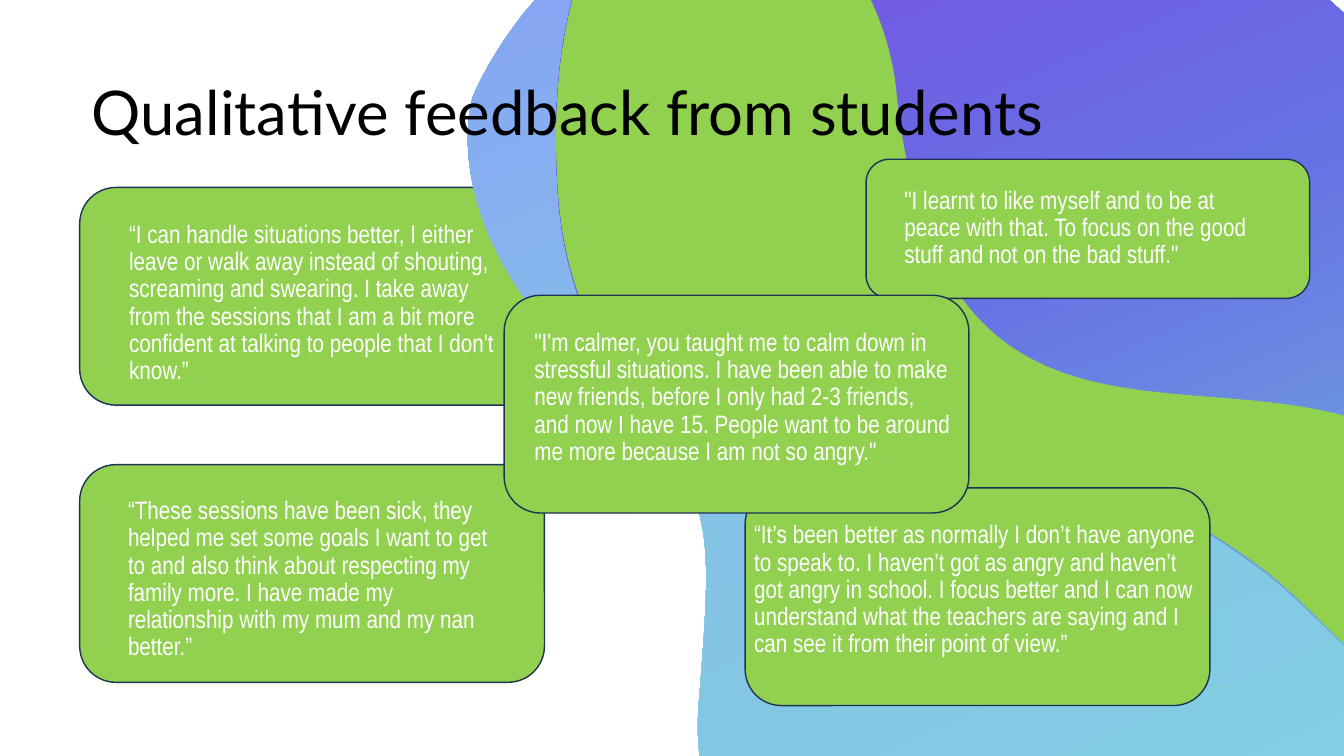
import copy
import math

import lxml.etree
import pptx
import pptx.dml.color
import pptx.enum.shapes
import pptx.enum.text
import pptx.oxml
import pptx.oxml.ns
import pptx.util

Inches = pptx.util.Inches
qn = pptx.oxml.ns.qn

# Content
TITLE = "Qualitative feedback from students"

# Each quote: card (left, top, width, height), text (left, top, width), wording
QUOTES = [
    ((0.79, 1.86, 4.61, 2.16), (1.28, 2.2, 3.64),
     "“I can handle situations better, I either leave or walk away instead of shouting, "
     "screaming and swearing. I take away from the sessions that I am a bit more confident "
     "at talking to people that I don't know.”"),
    ((0.79, 4.61, 4.61, 2.16), (1.27, 4.94, 3.64),
     "“These sessions have been sick, they helped me set some goals I want to get to and "
     "also think about respecting my family more. I have made my relationship with my mum "
     "and my nan better.”"),
    ((7.39, 4.84, 4.61, 2.16), (7.48, 5.18, 4.44),
     "“It’s been better as normally I don’t have anyone to speak to. I haven’t got as angry "
     "and haven’t got angry in school. I focus better and I can now understand what the "
     "teachers are saying and I can see it from their point of view.”"),
    ((8.59, 1.58, 4.4, 1.38), (8.97, 1.86, 3.64),
     '"I learnt to like myself and to be at peace with that. To focus on the good stuff '
     'and not on the bad stuff."'),
    ((5, 2.93, 4.61, 2.16), (5.3, 3.27, 4.17),
     '"I\'m calmer, you taught me to calm down in stressful situations. I have been able to '
     'make new friends, before I only had 2-3 friends, and now I have 15. People want to be '
     'around me more because I am not so angry."'),
]
QUOTE_HEIGHT = 1.47

THEME = {
    "green": "92D050", "outline": "1E3256", "title": "000000", "quote": "FFFFFF",
    "title_font": "Lato", "quote_font": "Arial Narrow", "title_size": 44, "quote_size": 18,
    "sky": [(0, "80DEDE"), (0.54, "85C1E7"), (1, "878CFF")],
    "violet": [(0, "7CEFD8"), (0.51, "6672E4"), (1, "882BE5")],
}

# Each wave: colours, frame before turning, start point, curves (control, control, end)
WAVE_TURN = 157
WAVES = [
    (THEME["sky"], (5, -2.31, 9.8, 12.6), (9.06, 1.2), [
        (9.53, 5.72, 12.84, 3.26, 14.64, 5.06), (16.44, 6.85, 15.77, 8.21, 15.22, 8.51),
        (14.67, 8.81, 14.2, 8.79, 13.65, 7.99), (13.1, 7.2, 11.37, 8.11, 10.18, 8.73),
        (9, 9.34, 6.76, 9.14, 6.93, 6.98), (7.1, 4.83, 7.08, 4.94, 5.69, 3.53),
        (4.3, 2.13, 4.69, 0.96, 4.69, 0.96), (4.69, 0.96, 5.47, -0.97, 7.2, -0.82),
        (8.94, -0.67, 9.06, 1.2, 9.06, 1.2)]),
    (THEME["violet"], (5.22, -2.95, 9.89, 11.76), (7.15, -1.7), [
        (7.15, -1.7, 5.33, -1.41, 5.53, 1.86), (5.72, 5.13, 8.98, 5.04, 10.14, 4.99),
        (11.3, 4.94, 11.59, 4.97, 12.51, 5.65), (13.43, 6.33, 14.04, 7.68, 15.24, 6.36),
        (16.44, 5.05, 14.22, 3.69, 13.92, 3.12), (13.62, 2.55, 14.21, 1.08, 13.69, 0.53),
        (13.18, -0.02, 12.83, -0.7, 10.39, -0.47), (10.39, -0.47, 9.2, -0.07, 8.29, -1.3),
        (8.29, -1.3, 7.73, -1.98, 7.15, -1.7)]),
    (THEME["green"], (5.41, -2.03, 8.55, 11.07), (5.53, 1.85), [
        (5.44, 0.37, 5.77, -0.5, 6.15, -1.01), (6.41, -1.1, 6.71, -1.14, 7.03, -1.12),
        (8.77, -0.97, 8.89, 0.91, 8.89, 0.91), (9.36, 5.42, 12.67, 2.96, 14.47, 4.76),
        (14.95, 5.24, 15.26, 5.69, 15.43, 6.1), (15.39, 6.18, 15.32, 6.27, 15.24, 6.35),
        (14.05, 7.67, 13.43, 6.32, 12.52, 5.64), (11.6, 4.96, 11.31, 4.93, 10.15, 4.98),
        (8.98, 5.03, 5.73, 5.12, 5.53, 1.85)]),
]


def rgb(colour):
    return pptx.dml.color.RGBColor.from_string(colour)


def place(shape, left, top, width, height):
    shape.left, shape.top = Inches(left), Inches(top)
    shape.width, shape.height = Inches(width), Inches(height)


def bring_to_front(shape):
    shapes._spTree.append(shape._element)


def write(box, text, *, font, size, colour, anchor="TOP"):
    frame = box.text_frame
    frame.word_wrap = True
    frame.auto_size = pptx.enum.text.MSO_AUTO_SIZE.NONE
    frame.vertical_anchor = getattr(pptx.enum.text.MSO_ANCHOR, anchor)
    frame.margin_left = frame.margin_right = frame.margin_top = frame.margin_bottom = 0
    frame.text = text
    paragraph = frame.paragraphs[0]
    paragraph.alignment = pptx.enum.text.PP_ALIGN.LEFT
    paragraph.line_spacing = 0.9
    paragraph.space_before = pptx.util.Pt(0)
    properties = paragraph._p.get_or_add_pPr()
    properties.set("marL", "0")
    properties.set("indent", "0")
    lxml.etree.SubElement(properties, qn("a:buNone"))
    style = paragraph.runs[0].font
    style.name, style.size = font, pptx.util.Pt(size)
    style.color.rgb = rgb(colour)


def add_quote(card_box, text_box, quote, holder=None):
    card = shapes.add_shape(pptx.enum.shapes.MSO_SHAPE.ROUNDED_RECTANGLE,
                            *map(Inches, card_box))
    card.shadow.inherit = False
    card.fill.solid()
    card.fill.fore_color.rgb = rgb(THEME["green"])
    card.line.color.rgb = rgb(THEME["outline"])
    card.line.width = pptx.util.Pt(1)
    if holder is None:
        holder = shapes.add_textbox(0, 0, 0, 0)
    else:
        bring_to_front(holder)
    place(holder, *text_box, QUOTE_HEIGHT)
    write(holder, quote, font=THEME["quote_font"], size=THEME["quote_size"],
          colour=THEME["quote"])


def turn_back(point, centre):
    """Undo the wave's rotation, so that its gradient turns with the shape."""
    angle = math.radians(-WAVE_TURN)
    dx, dy = point[0] - centre[0], point[1] - centre[1]
    return (Inches(centre[0] + dx * math.cos(angle) - dy * math.sin(angle)),
            Inches(centre[1] + dx * math.sin(angle) + dy * math.cos(angle)))


def bend(wave, frame):
    """Fit the wave to its frame and join its points, three at a time, as curves."""
    old_left, old_top = wave.left, wave.top
    place(wave, *frame)
    track = wave._element.spPr.find(".//" + qn("a:path"))
    track.set("w", str(wave.width))
    track.set("h", str(wave.height))
    for point in track.iter(qn("a:pt")):
        point.set("x", str(int(point.get("x")) + old_left - wave.left))
        point.set("y", str(int(point.get("y")) + old_top - wave.top))
    segments = track.findall(qn("a:lnTo"))
    for first in range(0, len(segments), 3):
        curve = lxml.etree.Element(qn("a:cubicBezTo"))
        segments[first].addprevious(curve)
        for segment in segments[first:first + 3]:
            curve.append(segment[0])
            track.remove(segment)


def add_wave(colours, frame, start, curves):
    left, top, width, height = frame
    centre = (left + width / 2, top + height / 2)
    points = [start] + [curve[i:i + 2] for curve in curves for i in (0, 2, 4)]
    outline = [turn_back(point, centre) for point in points]
    builder = shapes.build_freeform(*outline[0])
    builder.add_line_segments(outline[1:], close=True)
    wave = builder.convert_to_shape()
    bend(wave, frame)
    wave.rotation = WAVE_TURN
    wave.shadow.inherit = False
    wave.line.fill.background()
    if isinstance(colours, str):
        wave.fill.solid()
        wave.fill.fore_color.rgb = rgb(colours)
        return
    wave.fill.gradient()
    wave.fill.gradient_angle = 270
    stop_list = wave._element.spPr.find(".//" + qn("a:gsLst"))
    stop_list.append(copy.deepcopy(stop_list[0]))
    for stop, (position, colour) in zip(wave.fill.gradient_stops, colours):
        stop.position = position
        stop.color.rgb = rgb(colour)


presentation = pptx.Presentation()
presentation.slide_width, presentation.slide_height = Inches(13.33), Inches(7.5)
slide = presentation.slides.add_slide(presentation.slide_layouts[1])
shapes = slide.shapes
title, first_quote = shapes.title, slide.placeholders[1]

# First quote, behind the waves
add_quote(*QUOTES[0], holder=first_quote)

# Background waves
for wave_parts in WAVES:
    add_wave(*wave_parts)

# Title
bring_to_front(title)
place(title, 0.91, 0.42, 11.5, 1.45)
write(title, TITLE, font=THEME["title_font"], size=THEME["title_size"],
      colour=THEME["title"], anchor="MIDDLE")

# Remaining quotes, in front of the waves
for quote_parts in QUOTES[1:]:
    add_quote(*quote_parts)

presentation.save("out.pptx")
